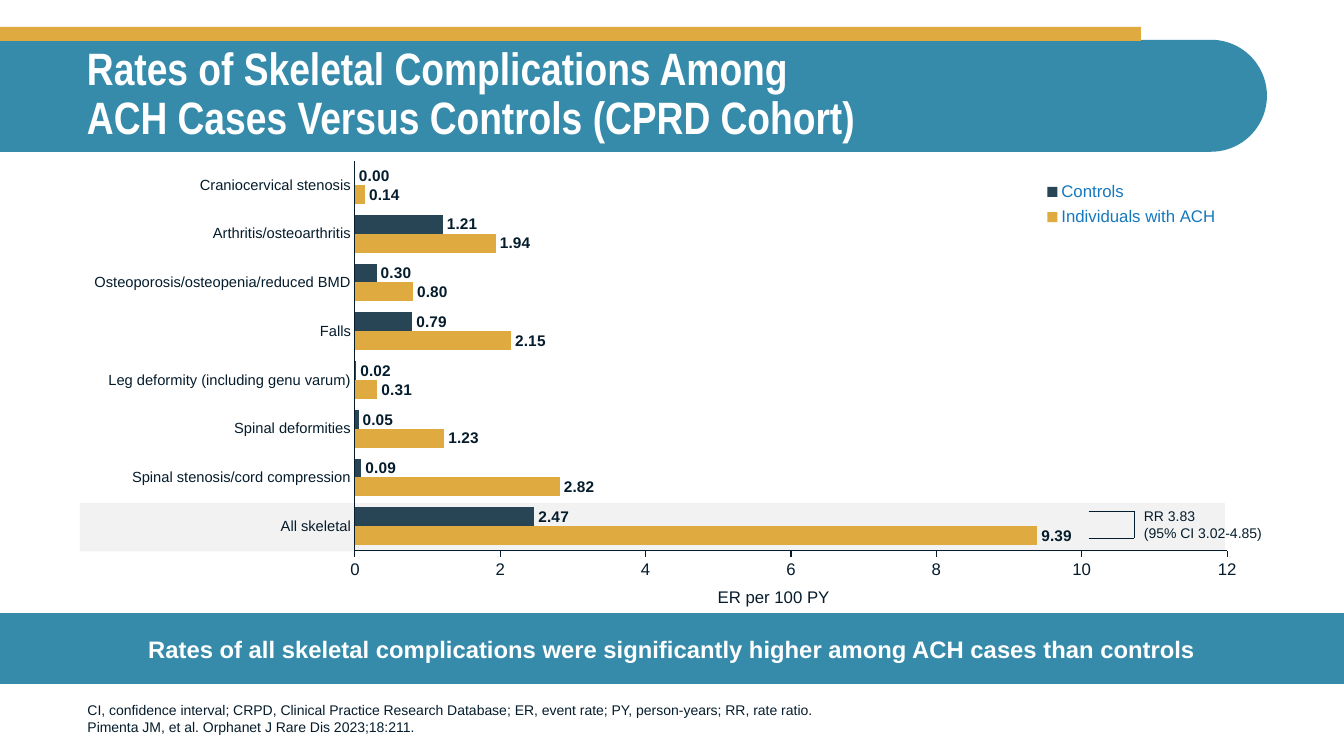
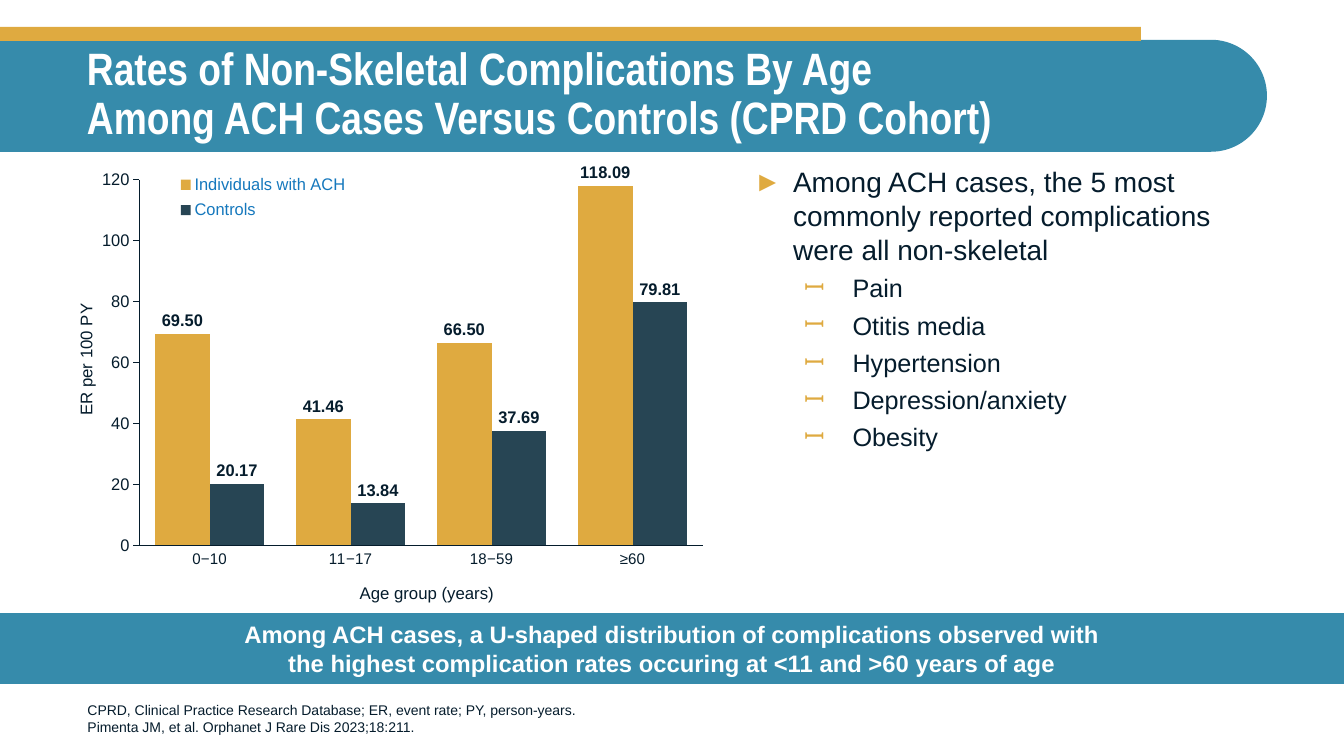
import copy

import pptx
import pptx.chart.data
import pptx.dml.color
import pptx.enum.chart
import pptx.enum.shapes
import pptx.enum.text
import pptx.oxml
import pptx.oxml.ns
import pptx.util

Pt = pptx.util.Pt
qn = pptx.oxml.ns.qn
PP_ALIGN = pptx.enum.text.PP_ALIGN
ANCHOR = pptx.enum.text.MSO_ANCHOR
SHAPE = pptx.enum.shapes.MSO_SHAPE
XL = pptx.enum.chart

TEAL, GOLD, NAVY = "368BAB", "DFAA40", "274554"
INK, WHITE, BLUE, PALE = "051C2C", "FFFFFF", "1578BD", "F2F2F2"
SLIDE_WIDTH, SLIDE_HEIGHT = 960, 540
BODY_FONT = "Arial"
SERIES_COLORS = {"Individuals with ACH": GOLD, "Controls": NAVY}


def rgb(hex_color):
    """Turn a hex string into a colour."""
    return pptx.dml.color.RGBColor.from_string(hex_color)


def points(*lengths):
    """Turn numbers into lengths in points."""
    return [Pt(length) for length in lengths]


def set_font(font, size, color=INK, bold=False, name=BODY_FONT):
    """Format a font."""
    font.size, font.bold, font.name = Pt(size), bold, name
    font.color.rgb = rgb(color)


def write(paragraph, text, align=PP_ALIGN.LEFT, line_spacing=None,
          space_before=0, **font):
    """Put formatted text into a paragraph, with its line breaks."""
    paragraph.text = text
    paragraph.alignment = align
    paragraph.space_before = Pt(space_before)
    if line_spacing:
        paragraph.line_spacing = line_spacing
    for run in paragraph.runs:
        set_font(run.font, **font)
    for line_break in paragraph._p.findall(qn("a:br")):
        line_break.append(copy.deepcopy(paragraph.runs[0]._r.rPr))


def add_text(slide, box, text, anchor=ANCHOR.MIDDLE, rotation=0, **style):
    """Add a wrapped text box."""
    label = slide.shapes.add_textbox(*points(*box))
    label.rotation = rotation
    label.text_frame.word_wrap = True
    label.text_frame.vertical_anchor = anchor
    write(label.text_frame.paragraphs[0], text, **style)


def add_block(slide, box, color, kind=SHAPE.RECTANGLE):
    """Add a plain filled shape."""
    block = slide.shapes.add_shape(kind, *points(*box))
    block.shadow.inherit = False
    block.fill.solid()
    block.fill.fore_color.rgb = rgb(color)
    block.line.fill.background()
    return block


def add_line(slide, x1, y1, x2, y2):
    """Add a thin straight line."""
    line = slide.shapes.add_connector(
        pptx.enum.shapes.MSO_CONNECTOR.STRAIGHT, *points(x1, y1, x2, y2))
    line.line.color.rgb = rgb(INK)
    line.line.width = Pt(0.5)
    line._element.spPr.append(pptx.oxml.parse_xml(
        f'<a:effectLst {pptx.oxml.ns.nsdecls("a")}/>'))


def add_framed_slide(deck, title, message, footnote):
    """Add a slide with header band, title, message banner and footnote."""
    slide = deck.slides.add_slide(deck.slide_layouts[5])
    band_height, band_length = 80, 905
    band = add_block(slide, ((band_length - band_height) / 2,
                             68.4 - band_length / 2, band_height, band_length),
                     TEAL, SHAPE.ROUND_2_SAME_RECTANGLE)
    band.adjustments[0], band.adjustments[1] = 0, 0.5
    band.rotation = 270
    add_block(slide, (0, 19.2, 815, 10), GOLD)

    heading = slide.shapes.title
    heading.element.getparent().append(heading.element)
    heading.left, heading.top, heading.width, heading.height = points(
        54.9, 28.5, 850, 79)
    heading.text_frame.auto_size = pptx.enum.text.MSO_AUTO_SIZE.NONE
    heading.text_frame.vertical_anchor = ANCHOR.MIDDLE
    write(heading.text_frame.paragraphs[0], title, line_spacing=0.9,
          size=32.4, color=WHITE, bold=True, name="Arial Narrow")

    banner = add_block(slide, (0, 438, SLIDE_WIDTH, 50.5), TEAL)
    frame = banner.text_frame
    frame.word_wrap = True
    frame.vertical_anchor = ANCHOR.MIDDLE
    frame.margin_left = frame.margin_right = Pt(57)
    write(frame.paragraphs[0], message, align=PP_ALIGN.CENTER,
          size=17, color=WHITE, bold=True)
    add_text(slide, (55.4, 489, 711, 40), footnote, ANCHOR.BOTTOM, size=10)
    return slide


def place(parent, index, x, y, w, h, target=""):
    """Give a chart part a fixed layout in fractions of the chart."""
    old = parent.find(qn("c:layout"))
    if old is not None:
        parent.remove(old)
    parent.insert(index, pptx.oxml.parse_xml(
        f'<c:layout {pptx.oxml.ns.nsdecls("c")}><c:manualLayout>{target}'
        '<c:xMode val="edge"/><c:yMode val="edge"/>'
        f'<c:x val="{x}"/><c:y val="{y}"/><c:w val="{w}"/><c:h val="{h}"/>'
        '</c:manualLayout></c:layout>'))


def format_axis(axis, tick, size):
    """Format an axis without gridlines."""
    axis.has_major_gridlines = False
    axis.major_tick_mark = tick
    axis.minor_tick_mark = XL.XL_TICK_MARK.NONE
    axis.format.line.color.rgb = rgb(INK)
    axis.format.line.width = Pt(0.75)
    set_font(axis.tick_labels.font, size)


def add_rate_chart(slide, kind, box, categories, rates, maximum, step,
                   category_size, label_size, plot_area, legend_area):
    """Add a clustered chart of the event rates in both groups."""
    data = pptx.chart.data.CategoryChartData(number_format="General")
    data.categories = categories
    for group, values in zip(SERIES_COLORS, rates):
        data.add_series(group, values)
    chart = slide.shapes.add_chart(kind, *points(*box), data).chart
    chart.has_title = False
    set_font(chart.font, 10)
    format_axis(chart.category_axis, XL.XL_TICK_MARK.NONE, category_size)
    format_axis(chart.value_axis, XL.XL_TICK_MARK.OUTSIDE, 12)
    chart.value_axis.minimum_scale = 0
    chart.value_axis.maximum_scale = maximum
    chart.value_axis.major_unit = step

    plot = chart.plots[0]
    plot.vary_by_categories = False
    plot.gap_width, plot.overlap = 58, 0
    for series in plot.series:
        series.format.fill.solid()
        series.format.fill.fore_color.rgb = rgb(SERIES_COLORS[series.name])
        labels = series.data_labels
        labels.show_value = True
        labels.number_format = "#,##0.00"
        labels.number_format_is_linked = False
        labels.position = XL.XL_LABEL_POSITION.OUTSIDE_END
        set_font(labels.font, label_size, bold=True)

    chart.has_legend = True
    chart.legend.position = XL.XL_LEGEND_POSITION.TOP
    chart.legend.include_in_layout = False
    set_font(chart.legend.font, 12, BLUE)
    place(chart.legend._element, 1, *legend_area)
    place(chart._chartSpace.chart.plotArea, 0, *plot_area,
          target='<c:layoutTarget val="inner"/>')


def add_bullets(slide, box, items):
    """Add a bulleted list of (level, text) items."""
    styles = [dict(mark="►", margin=28, hang=28, size=20, space=10),
              dict(mark="ꟷ", margin=70.5, hang=34.5, size=18, space=5)]
    frame = slide.shapes.add_textbox(*points(*box)).text_frame
    frame.word_wrap = True
    for index, (level, text) in enumerate(items):
        style = styles[level]
        paragraph = frame.add_paragraph() if index else frame.paragraphs[0]
        paragraph.level = level
        write(paragraph, text, size=style["size"],
              space_before=style["space"] if index else 0)
        properties = paragraph._p.get_or_add_pPr()
        properties.set("marL", str(Pt(style["margin"])))
        properties.set("indent", str(-Pt(style["hang"])))
        namespace = pptx.oxml.ns.nsdecls("a")
        for xml in (f'<a:buClr {namespace}><a:srgbClr val="{GOLD}"/></a:buClr>',
                    f'<a:buFont {namespace} typeface="{BODY_FONT}"/>',
                    f'<a:buChar {namespace} char="{style["mark"]}"/>'):
            properties.append(pptx.oxml.parse_xml(xml))


def add_skeletal_slide(deck):
    """Build the slide on skeletal complications."""
    slide = add_framed_slide(
        deck,
        "Rates of Skeletal Complications Among\v"
        "ACH Cases Versus Controls (CPRD Cohort)",
        "Rates of all skeletal complications were significantly higher "
        "among ACH cases than controls",
        "CI, confidence interval; CRPD, Clinical Practice Research Database; "
        "ER, event rate; PY, person-years; RR, rate ratio.\v"
        "Pimenta JM, et al. Orphanet J Rare Dis 2023;18:211.")
    add_block(slide, (57, 359.3, 818, 34.5), PALE)
    add_rate_chart(
        slide, XL.XL_CHART_TYPE.BAR_CLUSTERED, (34.8, 114.3, 854.6, 317.5),
        ["All skeletal", "Spinal stenosis/cord compression",
         "Spinal deformities", "Leg deformity (including genu varum)",
         "Falls", "Osteoporosis/osteopenia/reduced BMD",
         "Arthritis/osteoarthritis", "Craniocervical stenosis"],
        [(9.39, 2.82, 1.23, 0.31, 2.15, 0.8, 1.94, 0.14),
         (2.47, 0.09, 0.05, 0.02, 0.79, 0.3, 1.21, 0)],
        maximum=12, step=2, category_size=10.5, label_size=11,
        plot_area=(0.256, 0.001, 0.729, 0.878),
        legend_area=(0.825, 0.035, 0.16, 0.13))
    add_text(slide, (238.3, 414.7, 628.6, 23), "ER per 100 PY",
             align=PP_ALIGN.CENTER, size=12)
    left, right, top, bottom = 777.6, 810, 365, 384.5
    add_line(slide, left, top, right, top)
    add_line(slide, left, bottom, right, bottom)
    add_line(slide, right, top, right, bottom)
    add_text(slide, (right, 359.3, 104.4, 32.4),
             "RR 3.83\v(95% CI 3.02-4.85)", ANCHOR.TOP, size=10)


def add_age_slide(deck):
    """Build the slide on non-skeletal complications by age."""
    slide = add_framed_slide(
        deck,
        "Rates of Non-Skeletal Complications By Age\v"
        "Among ACH Cases Versus Controls (CPRD Cohort)",
        "Among ACH cases, a U-shaped distribution of complications observed "
        "with\vthe highest complication rates occuring at <11 and >60 years "
        "of age",
        "CPRD, Clinical Practice Research Database; ER, event rate; "
        "PY, person-years.\v"
        "Pimenta JM, et al. Orphanet J Rare Dis 2023;18:211.")
    complications = ["Pain", "Otitis media", "Hypertension",
                     "Depression/anxiety", "Obesity"]
    add_bullets(slide, (531.4, 114.3, 374.4, 308),
                [(0, "Among ACH cases, the 5 most commonly reported "
                     "complications were all non-skeletal")]
                + [(1, complication) for complication in complications])
    add_rate_chart(
        slide, XL.XL_CHART_TYPE.COLUMN_CLUSTERED, (72.9, 114.3, 432.7, 297.4),
        ["0−10", "11−17", "18−59", "≥60"],
        [(69.5, 41.46, 66.5, 118.09), (20.17, 13.84, 37.69, 79.81)],
        maximum=120, step=20, category_size=11, label_size=12,
        plot_area=(0.041, 0.048, 0.951, 0.878),
        legend_area=(0.1, 0.02, 0.3, 0.14))
    add_text(slide, (-71.3, 245.5, 265, 23), "ER per 100 PY", rotation=270,
             align=PP_ALIGN.CENTER, size=12)
    add_text(slide, (104.4, 411.8, 401, 23), "Age group (years)",
             align=PP_ALIGN.CENTER, size=12)


def main():
    """Build and save the presentation."""
    deck = pptx.Presentation()
    deck.slide_width, deck.slide_height = points(SLIDE_WIDTH, SLIDE_HEIGHT)
    add_skeletal_slide(deck)
    add_age_slide(deck)
    deck.save("out.pptx")


if __name__ == "__main__":
    main()
